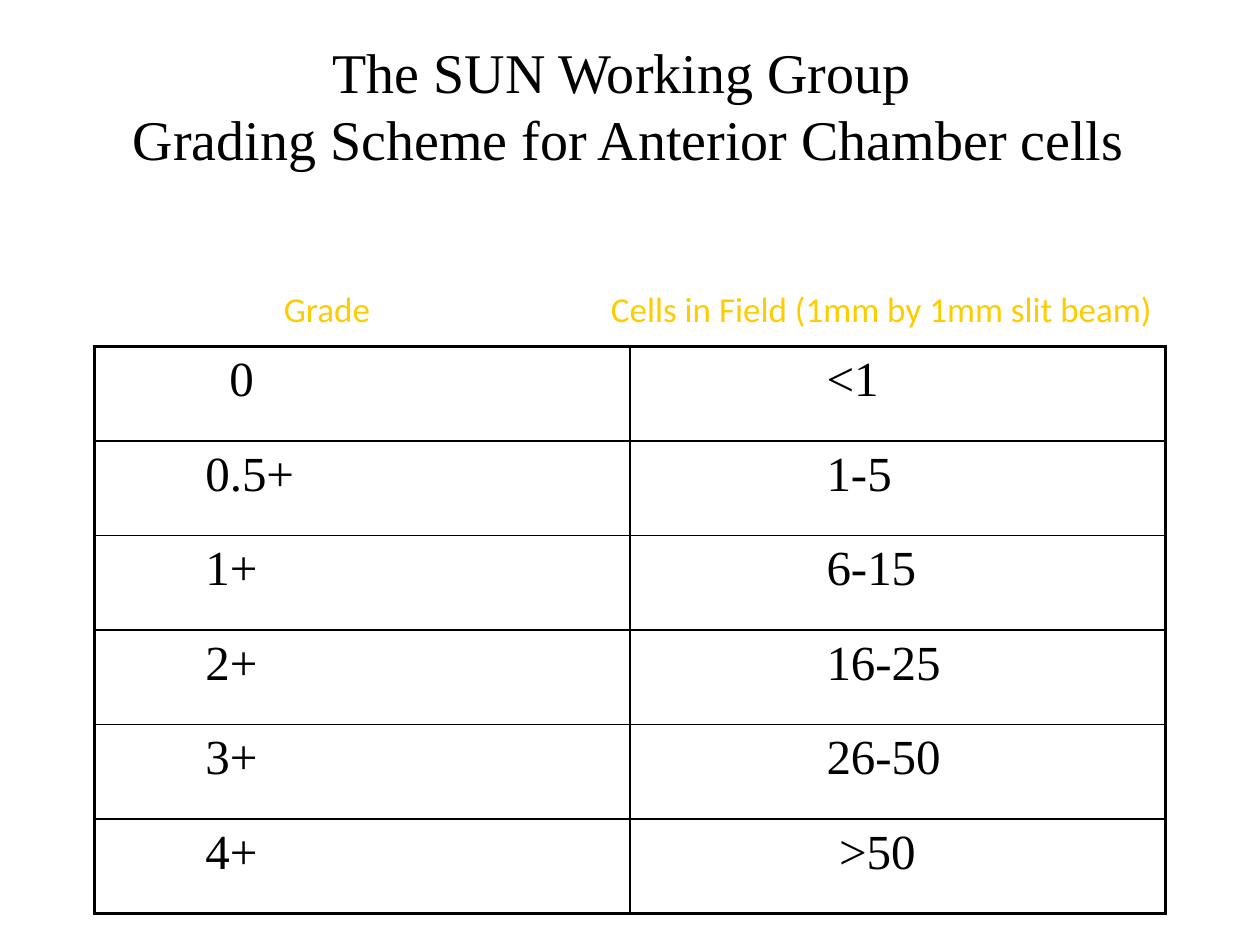
from lxml import etree
from pptx import Presentation
from pptx.dml.color import RGBColor
from pptx.enum.text import MSO_ANCHOR, PP_ALIGN
from pptx.oxml.ns import qn
from pptx.util import Inches, Pt

MID = MSO_ANCHOR.MIDDLE
LEFT, CENTER = PP_ALIGN.LEFT, PP_ALIGN.CENTER
SERIF, SANS = "Times New Roman", "Calibri"
BLACK, GOLD = "000000", "FFCC00"
THICK, THIN = 2.25, 1

TITLE = "The SUN Working Group \vGrading Scheme for Anterior Chamber cells"
HEADS = [
    ("Grade", (1.42, 2.23, 2.35, 0.43), CENTER),
    ("Cells in Field (1mm by 1mm slit beam)", (4.75, 2.23, 4.92, 0.43), LEFT),
]
GRADES = [
    ("0", "<1"),
    ("0.5+", "1-5"),
    ("1+", "6-15"),
    ("2+", "16-25"),
    ("3+", "26-50"),
    ("4+", ">50"),
]
INDENTS = (0.88, 1.56)
SHIFTS = {"0": 0.19, ">50": 0.1}


def style(frame, font, size, color, align):
    for para in frame.paragraphs:
        para.alignment = align
        for run in para.runs:
            run.font.name = font
            run.font.size = Pt(size)
            run.font.bold = False
            run.font.color.rgb = RGBColor.from_string(color)


def place(shape, box):
    shape.left, shape.top, shape.width, shape.height = map(Inches, box)


def border(cell, sides):
    props = cell._tc.get_or_add_tcPr()
    for side, width in sides.items():
        line = etree.SubElement(props, qn("a:ln" + side), w=str(Pt(width)))
        fill = etree.SubElement(line, qn("a:solidFill"))
        etree.SubElement(fill, qn("a:srgbClr"), val=BLACK)


def add_title(slide):
    title = slide.shapes.title
    place(title, (0.48, 0.11, 9.02, 1.44))
    frame = title.text_frame
    frame.text = TITLE
    frame.vertical_anchor = MID
    style(frame, SERIF, 32, BLACK, CENTER)


def add_grid(slide):
    rows, cols = len(GRADES), len(GRADES[0])
    box = map(Inches, (0.75, 2.75, 8.5, 4.5))
    table = slide.shapes.add_table(rows, cols, *box).table
    table.first_row = table.horz_banding = False
    for r, grade in enumerate(GRADES):
        for c, text in enumerate(grade):
            cell = table.cell(r, c)
            cell.text = text
            cell.margin_left = Inches(INDENTS[c] + SHIFTS.get(text, 0))
            style(cell.text_frame, SERIF, 28, BLACK, LEFT)
            edges = {"L": c == 0, "R": c == cols - 1,
                     "T": r == 0, "B": r == rows - 1}
            border(cell, {k: THICK if v else THIN for k, v in edges.items()})
            cell.fill.background()


def add_heads(slide):
    for text, box, align in HEADS:
        frame = slide.shapes.add_textbox(*map(Inches, box)).text_frame
        frame.word_wrap = True
        frame.text = text
        style(frame, SANS, 20, GOLD, align)


def main():
    deck = Presentation()
    deck.slide_width, deck.slide_height = Inches(10), Inches(7.5)
    slide = deck.slides.add_slide(deck.slide_layouts[5])
    add_title(slide)
    add_grid(slide)
    add_heads(slide)
    deck.save("out.pptx")


if __name__ == "__main__":
    main()
